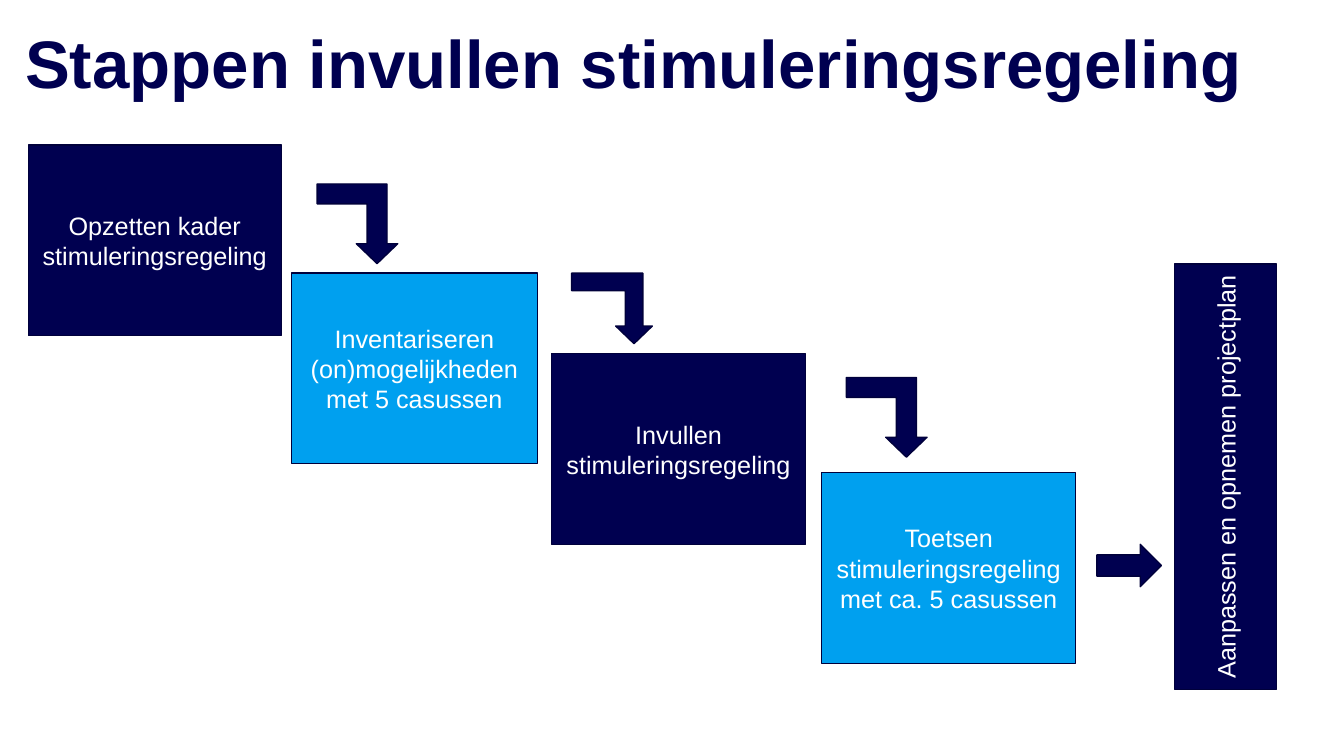
"""Build a slide with the cascading steps of a funding scheme."""
from dataclasses import dataclass

from pptx import Presentation
from pptx import util as u
from pptx.dml.color import RGBColor
from pptx.enum import shapes, text


@dataclass(frozen=True)
class Theme:
    """Colours, font and type sizes of the slide."""
    navy: RGBColor = RGBColor.from_string("000050")
    sky: RGBColor = RGBColor.from_string("00A0EF")
    outline: RGBColor = RGBColor.from_string("00003B")
    white: RGBColor = RGBColor.from_string("FFFFFF")
    font: str = "Arial"
    title: u.Length = u.Pt(48)
    body: u.Length = u.Pt(18)
    line: u.Length = u.Pt(1)


THEME = Theme()
STEP_HEIGHT = 1.89
STEPS = [
    ("Opzetten kader stimuleringsregeling", 0.28, 1.44, 2.51, THEME.navy),
    ("Inventariseren (on)mogelijkheden met 5 casussen", 2.89, 2.71, 2.44, THEME.sky),
    ("Invullen stimuleringsregeling", 5.47, 3.51, 2.52, THEME.navy),
    ("Toetsen stimuleringsregeling met ca. 5 casussen", 8.15, 4.69, 2.52, THEME.sky),
]
BENT_ARROWS = [(3.15, 1.82, 0.79, 0.8), (5.72, 2.66, 0.7, 0.8), (8.4, 3.74, 0.79, 0.8)]


def add_run(p, content, size, color, bold=False):
    """Append a styled run to a paragraph."""
    r = p.add_run()
    r.text = content
    r.font.name = THEME.font
    r.font.size = size
    r.font.bold = bold
    r.font.color.rgb = color


def add_title(s, content):
    """Add the slide heading."""
    tf = s.shapes.add_textbox(*map(u.Inches, (0.25, 0.25, 12.8, 1.34))).text_frame
    tf.word_wrap = True
    tf.margin_left = tf.margin_right = 0
    p = tf.paragraphs[0]
    p.line_spacing = 0.9
    add_run(p, content, THEME.title, THEME.navy, bold=True)


def add_figure(s, kind, box, fill):
    """Add an outlined preset shape without shadow."""
    sp = s.shapes.add_shape(kind, *map(u.Inches, box))
    sp.shadow.inherit = False
    sp.fill.solid()
    sp.fill.fore_color.rgb = fill
    sp.line.color.rgb = THEME.outline
    sp.line.width = THEME.line
    return sp


def add_step(s, content, box, fill, vertical=False):
    """Add a labelled box, optionally with text reading upwards."""
    tf = add_figure(s, shapes.MSO_SHAPE.RECTANGLE, box, fill).text_frame
    tf.word_wrap = True
    tf.vertical_anchor = text.MSO_ANCHOR.MIDDLE
    if vertical:
        tf._txBody.bodyPr.set("vert", "vert270")
    p = tf.paragraphs[0]
    p.alignment = text.PP_ALIGN.CENTER
    add_run(p, content, THEME.body, THEME.white)


def add_bent_arrow(s, box):
    """Add an arrow that turns down to the next step."""
    sp = add_figure(s, shapes.MSO_SHAPE.BENT_ARROW, box, THEME.navy)
    sp.rotation = 90
    for i, value in enumerate((0.25, 0.26, 0.25, 0)):
        sp.adjustments[i] = value


def main():
    """Compose and save the slide."""
    prs = Presentation()
    prs.slide_width, prs.slide_height = u.Inches(13.33), u.Inches(7.5)
    s = prs.slides.add_slide(prs.slide_layouts[6])
    add_title(s, "Stappen invullen stimuleringsregeling")
    for content, left, top, width, fill in STEPS:
        add_step(s, content, (left, top, width, STEP_HEIGHT), fill)
    add_step(s, "Aanpassen en opnemen projectplan", (11.65, 2.62, 1.01, 4.22),
             THEME.navy, vertical=True)
    for box in BENT_ARROWS:
        add_bent_arrow(s, box)
    add_figure(s, shapes.MSO_SHAPE.RIGHT_ARROW, (10.88, 5.4, 0.64, 0.42), THEME.navy)
    prs.save("out.pptx")


if __name__ == "__main__":
    main()
